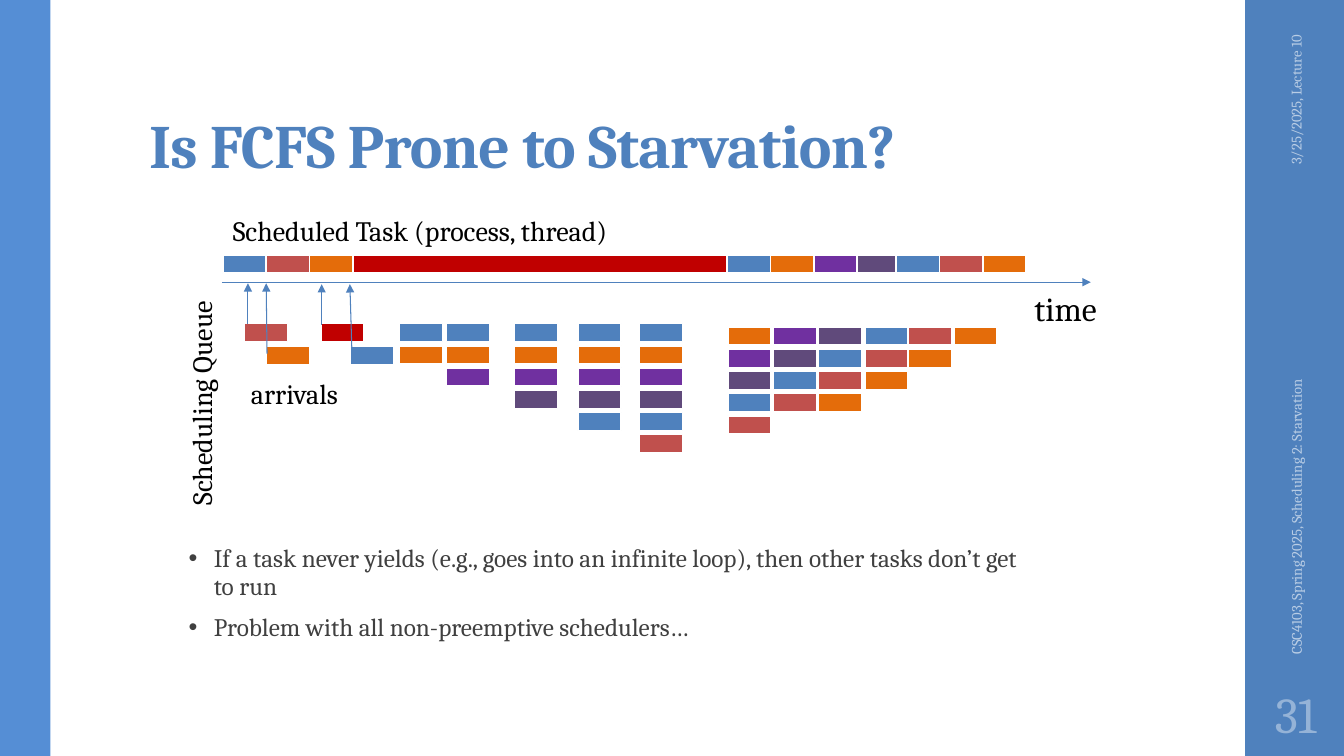
from lxml.etree import SubElement
from pptx import Presentation
from pptx.dml.color import RGBColor
from pptx.enum.shapes import MSO_CONNECTOR, MSO_SHAPE
from pptx.enum.text import MSO_ANCHOR, MSO_AUTO_SIZE, PP_ALIGN
from pptx.oxml.ns import qn
from pptx.util import Inches, Pt

WIDTH, HEIGHT = Inches(13.33), Inches(7.5)
COLUMNS, ROWS = 31, 34  # one column is one time slice, one row one queue place

BLUE, RED, ORANGE = "4F81BD", "C0504D", "E46C0A"
PURPLE, VIOLET, CRIMSON = "7030A0", "604A7B", "C00000"
WHITE, BLACK = "FFFFFF", "000000"

TASK_HEIGHT = 0.82
TIMELINE_TOP, AXIS_ROW = 11.47, 12.69
QUEUE_TOP, LATE_QUEUE_TOP = 14.55, 14.7

# Start column, then (colour, duration) of each task in the run
SCHEDULED_RUNS = [
    (5.14, [(BLUE, 1), (RED, 1), (ORANGE, 1), (CRIMSON, 8.63),
            (BLUE, 1), (ORANGE, 1), (PURPLE, 1), (VIOLET, 1)]),
    (20.67, [(BLUE, 1), (RED, 1), (ORANGE, 1)]),
]

# Every snapshot of the queue is a slice of the waiting order
WAITING = [BLUE, ORANGE, PURPLE, VIOLET, BLUE, RED, ORANGE]
SNAPSHOTS = [  # column, top row, first and end of the slice
    (9.21, QUEUE_TOP, 0, 2), (10.3, QUEUE_TOP, 0, 3),
    (11.86, QUEUE_TOP, 0, 4), (13.33, QUEUE_TOP, 0, 5),
    (14.74, QUEUE_TOP, 0, 6),
    (16.79, LATE_QUEUE_TOP, 1, 6), (17.84, LATE_QUEUE_TOP, 2, 6),
    (18.88, LATE_QUEUE_TOP, 3, 7), (19.95, LATE_QUEUE_TOP, 4, 7),
    (20.95, LATE_QUEUE_TOP, 5, 7), (22, LATE_QUEUE_TOP, 6, 7),
]

ARRIVALS = [  # column, row, colour, arrow start, arrow end
    (5.63, 14.55, RED, (5.72, 14.55), (5.72, 12.74)),
    (6.14, 15.59, ORANGE, (6.16, 15.91), (6.14, 12.74)),
    (7.4, 14.55, CRIMSON, (7.42, 14.6), (7.42, 12.78)),
    (8.09, 15.59, BLUE, (8.12, 15.96), (8.07, 12.78)),
]


def x(columns):
    return round(WIDTH * columns / COLUMNS)


def y(rows):
    return round(HEIGHT * rows / ROWS)


def frame(left, top, width, height):
    """Turn grid units into slide lengths."""
    return x(left), y(top), x(width), y(height)


def rgb(color):
    return RGBColor.from_string(color)


def add_bar(shapes, place, color, outline=None):
    bar = shapes.add_shape(MSO_SHAPE.RECTANGLE, *frame(*place))
    bar.shadow.inherit = False
    bar.fill.solid()
    bar.fill.fore_color.rgb = rgb(color)
    if outline:
        bar.line.color.rgb = rgb(outline)
        bar.line.width = Pt(1.1)
    else:
        bar.line.fill.background()


def add_task(shapes, column, row, color, duration=1):
    add_bar(shapes, (column, row, duration, TASK_HEIGHT), color, WHITE)


def add_arrow(shapes, start, end):
    arrow = shapes.add_connector(MSO_CONNECTOR.STRAIGHT, x(start[0]), y(start[1]),
                                 x(end[0]), y(end[1]))
    arrow.line.color.rgb = rgb(BLUE)
    arrow.line.width = Pt(0.75)
    SubElement(arrow.line._get_or_add_ln(), qn("a:tailEnd"), type="triangle")
    SubElement(arrow._element.spPr, qn("a:effectLst"))


def add_text(shapes, place, *paragraphs, size, color=BLACK, bold=False, wrap=True,
             turn=0, anchor=MSO_ANCHOR.TOP, align=PP_ALIGN.LEFT, bullet=False,
             line_spacing=None, tracking=None, insets=(0.1, 0.05, 0.1, 0.05)):
    box = shapes.add_textbox(*frame(*place))
    box.rotation = turn
    text = box.text_frame
    text.word_wrap = wrap
    text.auto_size = MSO_AUTO_SIZE.NONE if wrap else MSO_AUTO_SIZE.SHAPE_TO_FIT_TEXT
    text.vertical_anchor = anchor
    (text.margin_left, text.margin_top,
     text.margin_right, text.margin_bottom) = map(Inches, insets)
    for index, words in enumerate(paragraphs):
        paragraph = text.add_paragraph() if index else text.paragraphs[0]
        paragraph.alignment = align
        if line_spacing:
            paragraph.line_spacing = line_spacing
        if index:
            paragraph.space_before = Pt(10)
        if bullet:
            properties = paragraph._p.get_or_add_pPr()
            properties.set("marL", str(Inches(0.25)))
            properties.set("indent", str(-Inches(0.25)))
            SubElement(properties, qn("a:buFont"), typeface="Arial")
            SubElement(properties, qn("a:buChar"), char="•")
        run = paragraph.add_run()
        run.text = words
        run.font.name = "Cambria"
        run.font.size = Pt(size)
        run.font.bold = bold
        run.font.color.rgb = rgb(color)
        if tracking:
            run._r.get_or_add_rPr().set("spc", str(round(tracking * 100)))


def add_side_bars(shapes):
    add_bar(shapes, (28.72, 0, 2.28, ROWS), BLUE)
    add_bar(shapes, (0, 0, 1.16, ROWS), "558ED5")
    margin_note = dict(size=10.5, color="B9CDE5", turn=270, anchor=MSO_ANCHOR.MIDDLE)
    add_text(shapes, (27.47, 4.94, 4.84, 1.81), "3/25/2025, Lecture 10",
             align=PP_ALIGN.RIGHT, **margin_note)
    add_text(shapes, (25.33, 20.08, 9.12, 1.81),
             "CSC4103, Spring 2025, Scheduling 2: Starvation", **margin_note)
    add_text(shapes, (28.72, 30.6, 2.33, 2.95), "31", size=36, color="95B3D7",
             anchor=MSO_ANCHOR.MIDDLE, align=PP_ALIGN.CENTER, insets=(0.05,) * 4)


def add_schedule(shapes):
    add_arrow(shapes, (5.12, AXIS_ROW), (25.16, AXIS_ROW))
    for column, tasks in SCHEDULED_RUNS:
        for color, duration in tasks:
            add_task(shapes, column, TIMELINE_TOP, color, duration)
            column += duration
    for column, top, first, end in SNAPSHOTS:
        for place, color in enumerate(WAITING[first:end]):
            add_task(shapes, column, top + place, color)
    for column, row, color, start, end in ARRIVALS:
        add_task(shapes, column, row, color)
        add_arrow(shapes, start, end)
    add_text(shapes, (23.63, 12.74, 2.12, 2.27), "time", size=24, wrap=False)
    add_text(shapes, (1.65, 16.36, 5.98, 1.99), "Scheduling Queue", size=20,
             wrap=False, turn=270)
    add_text(shapes, (5.14, 9.38, 10.4, 1.99), "Scheduled Task (process, thread)",
             size=20, wrap=False)
    add_text(shapes, (5.56, 16.73, 2.84, 1.99), "arrivals", size=20, wrap=False)


def main():
    deck = Presentation()
    deck.slide_width, deck.slide_height = WIDTH, HEIGHT
    shapes = deck.slides.add_slide(deck.slide_layouts[6]).shapes
    add_side_bars(shapes)
    add_text(shapes, (3.21, 1.45, 24.65, 6.94), "Is FCFS Prone to Starvation?",
             size=44, color=BLUE, bold=True, anchor=MSO_ANCHOR.BOTTOM,
             line_spacing=0.9, tracking=-0.5, insets=(0.1, 0.03, 0.1, 0.05))
    add_text(shapes, (4.12, 24.34, 20.05, 8.02),
             "If a task never yields (e.g., goes into an infinite loop), "
             "then other tasks don’t get to run",
             "Problem with all non-preemptive schedulers…",
             size=18, color="404040", bullet=True, line_spacing=0.9)
    add_schedule(shapes.add_group_shape().shapes)
    deck.save("out.pptx")


if __name__ == "__main__":
    main()
